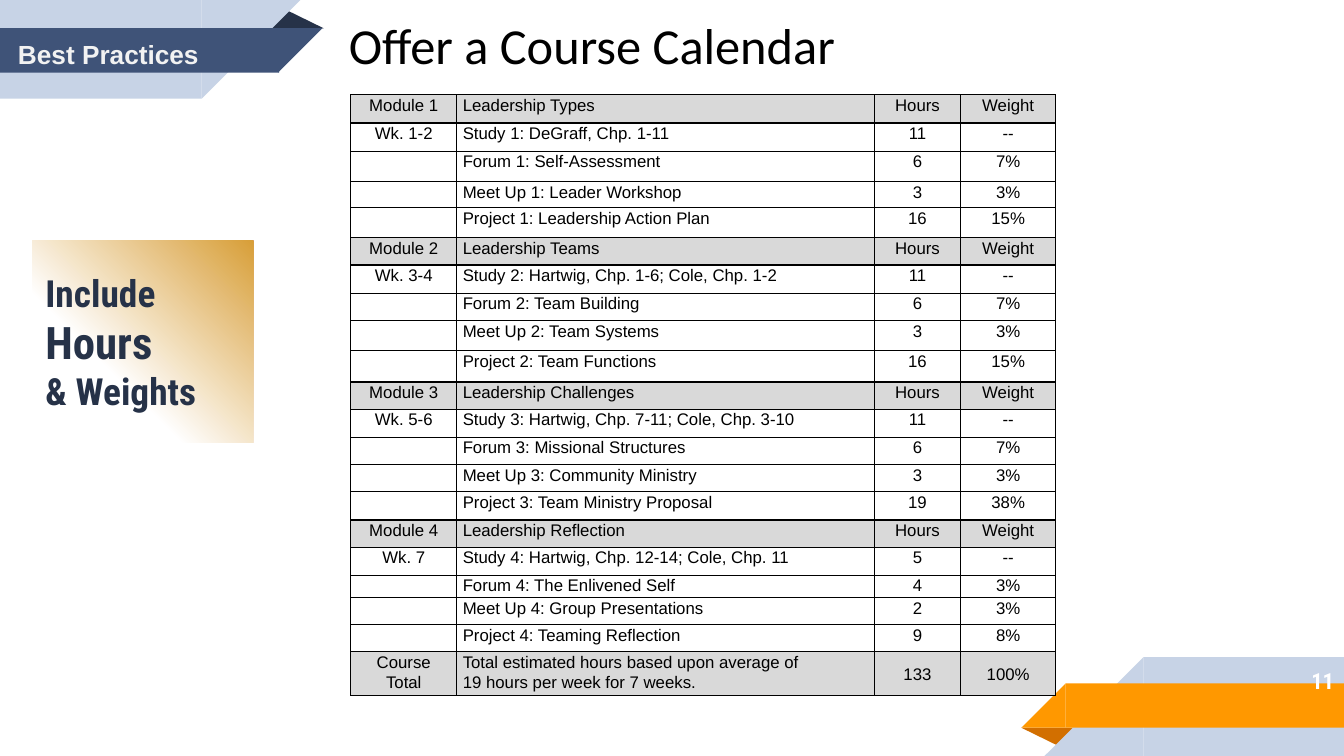
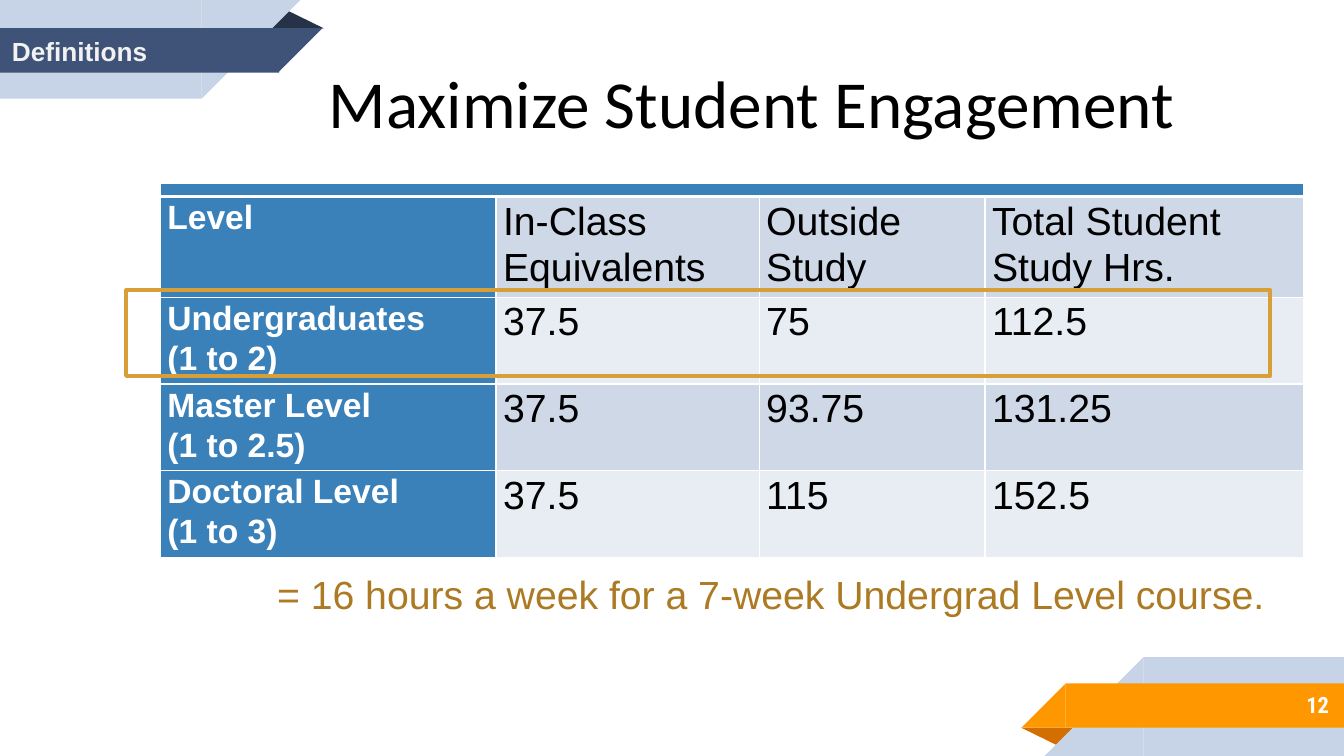
"""Build two course-planning slides that share ribbon bands and title styling."""
from typing import NamedTuple, Optional

from lxml.etree import SubElement
from pptx import Presentation
from pptx.dml.color import RGBColor
from pptx.enum.shapes import MSO_SHAPE
from pptx.enum.text import MSO_ANCHOR, MSO_AUTO_SIZE, PP_ALIGN
from pptx.oxml.ns import qn
from pptx.util import Inches, Pt

COLORS = {
    "black": "000000",
    "white": "FFFFFF",
    "label": "F2F2F2",
    "pale": "C7D3E6",
    "navy": "3F5378",
    "dark navy": "263248",
    "orange": "FF9800",
    "dark orange": "D26F00",
    "gold": "D89F39",
    "dark gold": "AB7A22",
    "gray": "D9D9D9",
    "blue": "3A81BA",
    "band": "CED8E7",
    "light band": "E8EDF3",
}
BODY_FONT = "Arial"
TITLE_FONT = "Calibri"
ACCENT_FONT = "Roboto Condensed"


class Box(NamedTuple):
    left: float
    top: float
    width: float
    height: float

    def lengths(self):
        return tuple(Inches(value) for value in self)


class TextStyle(NamedTuple):
    size: float
    color: str
    font: str = BODY_FONT
    bold: bool = False
    align: PP_ALIGN = PP_ALIGN.LEFT


class RibbonPart(NamedTuple):
    preset: MSO_SHAPE
    box: Box
    color: str
    flip: Optional[str] = None
    rotation: int = 0


class Activity(NamedTuple):
    kind: str
    topic: str
    hours: int
    weight: str


class Module(NamedTuple):
    title: str
    weeks: str
    activities: tuple


class CellStyle(NamedTuple):
    text: TextStyle
    fill: Optional[str]
    border: str
    inset: float
    anchor: MSO_ANCHOR = MSO_ANCHOR.TOP
    top_width: float = 1
    bottom_width: float = 1


RECTANGLE, CORNER, FOLD = MSO_SHAPE.RECTANGLE, MSO_SHAPE.RIGHT_TRIANGLE, MSO_SHAPE.ISOSCELES_TRIANGLE
RIBBON_PARTS = (
    RibbonPart(FOLD, Box(10.13, 7.22, 0.57, 0.19), "dark orange", rotation=180),
    RibbonPart(RECTANGLE, Box(11.34, 6.52, 2, 0.98), "pale"),
    RibbonPart(CORNER, Box(10.36, 6.52, 0.98, 0.98), "pale", "flipH"),
    RibbonPart(RECTANGLE, Box(10.57, 6.78, 2.77, 0.44), "orange"),
    RibbonPart(CORNER, Box(10.13, 6.78, 0.44, 0.44), "orange", "flipH"),
    RibbonPart(FOLD, Box(2.64, 0.09, 0.57, 0.19), "dark navy"),
    RibbonPart(RECTANGLE, Box(0, 0, 2, 0.98), "pale"),
    RibbonPart(CORNER, Box(2, 0, 0.98, 0.98), "pale", "flipV"),
    RibbonPart(RECTANGLE, Box(0, 0.28, 2.77, 0.44), "navy"),
    RibbonPart(CORNER, Box(2.76, 0.28, 0.44, 0.44), "navy", "flipV"),
)
LABEL_STYLE = TextStyle(18.7, "label", bold=True)
NUMBER_STYLE = TextStyle(16, "white", ACCENT_FONT, True, PP_ALIGN.RIGHT)

MODULES = (
    Module("Leadership Types", "Wk. 1-2", (
        Activity("Study", "DeGraff, Chp. 1-11", 11, "--"),
        Activity("Forum", "Self-Assessment", 6, "7%"),
        Activity("Meet Up", "Leader Workshop", 3, "3%"),
        Activity("Project", "Leadership Action Plan", 16, "15%"))),
    Module("Leadership Teams", "Wk. 3-4", (
        Activity("Study", "Hartwig, Chp. 1-6; Cole, Chp. 1-2", 11, "--"),
        Activity("Forum", "Team Building", 6, "7%"),
        Activity("Meet Up", "Team Systems", 3, "3%"),
        Activity("Project", "Team Functions", 16, "15%"))),
    Module("Leadership Challenges", "Wk. 5-6", (
        Activity("Study", "Hartwig, Chp. 7-11; Cole, Chp. 3-10", 11, "--"),
        Activity("Forum", "Missional Structures", 6, "7%"),
        Activity("Meet Up", "Community Ministry", 3, "3%"),
        Activity("Project", "Team Ministry Proposal", 19, "38%"))),
    Module("Leadership Reflection", "Wk. 7", (
        Activity("Study", "Hartwig, Chp. 12-14; Cole, Chp. 11", 5, "--"),
        Activity("Forum", "The Enlivened Self", 4, "3%"),
        Activity("Meet Up", "Group Presentations", 2, "3%"),
        Activity("Project", "Teaming Reflection", 9, "8%"))),
)
CALENDAR_HEIGHTS = (0.28, 0.28, 0.3, 0.26, 0.3, 0.27, 0.28, 0.27, 0.3, 0.31, 0.27,
                    0.28, 0.27, 0.27, 0.28, 0.27, 0.28, 0.22, 0.27, 0.27, 0.43)
STUDY_ROWS = (
    ("", "", "", ""),
    ("Level", "In-Class\nEquivalents", "Outside\nStudy", "Total Student Study Hrs."),
    ("Undergraduates\n(1 to 2)", "37.5", "75", "112.5"),
    ("Master Level\n(1 to 2.5)", "37.5", "93.75", "131.25"),
    ("Doctoral Level\n(1 to 3)", "37.5", "115", "152.5"),
)


def rgb(color: str) -> RGBColor:
    return RGBColor.from_string(COLORS[color])


def apply_font(font, style: TextStyle) -> None:
    font.name, font.size, font.bold = style.font, Pt(style.size), style.bold
    font.color.rgb = rgb(style.color)


def write(paragraph, text: str, style: TextStyle) -> None:
    paragraph.text = text
    paragraph.alignment = style.align
    apply_font(paragraph.font, style)


def set_insets(text_frame, inset: float) -> None:
    text_frame.margin_left = text_frame.margin_right = Inches(inset)
    text_frame.margin_top = text_frame.margin_bottom = Inches(inset)


def add_shape(slide, preset: MSO_SHAPE, box: Box):
    shape = slide.shapes.add_shape(preset, *box.lengths())
    shape.shadow.inherit = False
    shape.line.fill.background()
    return shape


def add_text(slide, box: Box, text: str, style: TextStyle, wrap: bool = True):
    text_frame = slide.shapes.add_textbox(*box.lengths()).text_frame
    text_frame.word_wrap = wrap
    write(text_frame.paragraphs[0], text, style)
    return text_frame


def add_ribbon_part(slide, part: RibbonPart) -> None:
    shape = add_shape(slide, part.preset, part.box)
    shape.fill.solid()
    shape.fill.fore_color.rgb = rgb(part.color)
    shape.rotation = part.rotation
    if part.preset == FOLD:
        shape.adjustments[0] = 0.32
    if part.flip:
        shape.element.spPr.xfrm.set(part.flip, "1")


def add_base_slide(presentation, title: str, title_box: Box, title_size: float,
                   label: str, label_box: Box, number: int, number_box: Box):
    slide = presentation.slides.add_slide(presentation.slide_layouts[5])
    for part in RIBBON_PARTS:
        add_ribbon_part(slide, part)
    number_frame = add_text(slide, number_box, str(number), NUMBER_STYLE)
    number_frame.vertical_anchor = MSO_ANCHOR.MIDDLE
    set_insets(number_frame, 0.1)

    placeholder = slide.shapes.title
    placeholder.left, placeholder.top, placeholder.width, placeholder.height = title_box.lengths()
    text_frame = placeholder.text_frame
    text_frame.auto_size = MSO_AUTO_SIZE.NONE
    text_frame.vertical_anchor = MSO_ANCHOR.MIDDLE
    set_insets(text_frame, 0.1)
    write(text_frame.paragraphs[0], title, TextStyle(title_size, "black", TITLE_FONT))

    add_text(slide, label_box, label, LABEL_STYLE, wrap=False)
    return slide


def add_border(cell, side: str, width: float, color: str) -> None:
    line = SubElement(cell._tc.get_or_add_tcPr(), qn(f"a:{side}"), w=str(Pt(width)))
    fill = SubElement(line, qn("a:solidFill"))
    SubElement(fill, qn("a:srgbClr"), val=COLORS[color])


def fill_cell(cell, text: str, style: CellStyle) -> None:
    cell.margin_left = cell.margin_right = Inches(style.inset)
    cell.margin_top = cell.margin_bottom = 0
    cell.vertical_anchor = style.anchor
    widths = {"lnL": 1, "lnR": 1, "lnT": style.top_width, "lnB": style.bottom_width}
    for side, width in widths.items():
        add_border(cell, side, width, style.border)
    if style.fill:
        cell.fill.solid()
        cell.fill.fore_color.rgb = rgb(style.fill)
    else:
        cell.fill.background()
    paragraph = cell.text_frame.paragraphs[0]
    write(paragraph, text, style.text)
    paragraph.line_spacing = 1.07
    if not text:
        SubElement(paragraph._p, qn("a:endParaRPr"), sz=str(int(style.text.size * 100)))


def add_grid(slide, left: float, top: float, widths, heights, rows, style_for):
    box = Box(left, top, sum(widths), sum(heights))
    table = slide.shapes.add_table(len(rows), len(widths), *box.lengths()).table
    table.first_row = table.horz_banding = False
    for column, width in zip(table.columns, widths):
        column.width = Inches(width)
    for row_index, (row, height) in enumerate(zip(rows, heights)):
        table.rows[row_index].height = Inches(height)
        for column_index, text in enumerate(row):
            fill_cell(table.cell(row_index, column_index), text, style_for(row_index, column_index))
    return table


def calendar_rows() -> list:
    rows = []
    for number, module in enumerate(MODULES, 1):
        rows.append((f"Module {number}", module.title, "Hours", "Weight"))
        for index, activity in enumerate(module.activities):
            rows.append((module.weeks if index == 0 else "",
                         f"{activity.kind} {number}: {activity.topic}",
                         str(activity.hours), activity.weight))
    total = "Total estimated hours based upon average of\n19 hours per week for 7 weeks."
    return rows + [("Course Total", total, "133", "100%")]


def calendar_style(row: int, column: int) -> CellStyle:
    align = PP_ALIGN.LEFT if column == 1 else PP_ALIGN.CENTER
    is_total = row == len(CALENDAR_HEIGHTS) - 1
    anchor = MSO_ANCHOR.MIDDLE if is_total and column > 1 else MSO_ANCHOR.TOP
    return CellStyle(TextStyle(12, "black", align=align), "gray" if row % 5 == 0 else None,
                     "black", 0.01 if column == 2 else 0.06, anchor)


def study_style(row: int, column: int) -> CellStyle:
    if row == 0:
        return CellStyle(TextStyle(1, "white"), "blue", "white", 0.07, bottom_width=3)
    top_width = 3 if row == 1 else 1
    if column == 0:
        return CellStyle(TextStyle(24, "white", bold=True), "blue", "white", 0.07, top_width=top_width)
    return CellStyle(TextStyle(28, "black"), "band" if row % 2 else "light band",
                     "white", 0.07, top_width=top_width)


def add_callout(slide) -> None:
    callout = add_shape(slide, RECTANGLE, Box(0.32, 2.39, 2.19, 2))
    callout.fill.gradient()
    callout.fill.gradient_angle = 45
    for stop, position, color in zip(callout.fill.gradient_stops, (0.35, 1), ("white", "gold")):
        stop.position = position
        stop.color.rgb = rgb(color)
    text_frame = callout.text_frame
    text_frame.word_wrap = True
    text_frame.vertical_anchor = MSO_ANCHOR.MIDDLE
    set_insets(text_frame, 0.13)
    paragraph = text_frame.paragraphs[0]
    paragraph.alignment = PP_ALIGN.LEFT
    for index, (text, size) in enumerate((("Include", 26.7), ("Hours", 32), ("& Weights", 26.7))):
        if index:
            paragraph.add_line_break()
        run = paragraph.add_run()
        run.text = text
        apply_font(run.font, TextStyle(size, "dark navy", ACCENT_FONT, True))


def add_calendar_slide(presentation) -> None:
    slide = add_base_slide(presentation, "Offer a Course Calendar", Box(3.36, -0.12, 8.89, 1.12), 36,
                           "Best Practices", Box(0.08, 0.33, 2.01, 0.42),
                           11, Box(11.16, 6.52, 2.17, 0.46))
    add_grid(slide, 3.48, 0.94, (1.05, 4.14, 0.86, 0.94), CALENDAR_HEIGHTS,
             calendar_rows(), calendar_style)
    add_callout(slide)


def add_engagement_slide(presentation) -> None:
    slide = add_base_slide(presentation, "Maximize Student Engagement", Box(3.16, 0.45, 8.6, 1.12), 48,
                           "Definitions", Box(0.02, 0.3, 1.55, 0.42),
                           12, Box(11.11, 6.76, 2.17, 0.46))
    table = add_grid(slide, 1.59, 1.82, (3.33, 2.61, 2.24, 3.16), (0.13, 0.99, 0.86, 0.86, 0.86),
                     STUDY_ROWS, study_style)
    table.cell(0, 0).merge(table.cell(0, 3))
    add_text(slide, Box(2.65, 5.61, 10.6, 0.57),
             "= 16 hours a week for a 7-week Undergrad Level course.", TextStyle(28, "dark gold"))
    highlight = add_shape(slide, RECTANGLE, Box(1.25, 2.88, 11.35, 0.85))
    highlight.fill.background()
    highlight.line.color.rgb = rgb("gold")
    highlight.line.width = Pt(2.75)


def main() -> None:
    presentation = Presentation()
    presentation.slide_width, presentation.slide_height = Inches(13.33), Inches(7.5)
    add_calendar_slide(presentation)
    add_engagement_slide(presentation)
    presentation.save("out.pptx")


if __name__ == "__main__":
    main()
